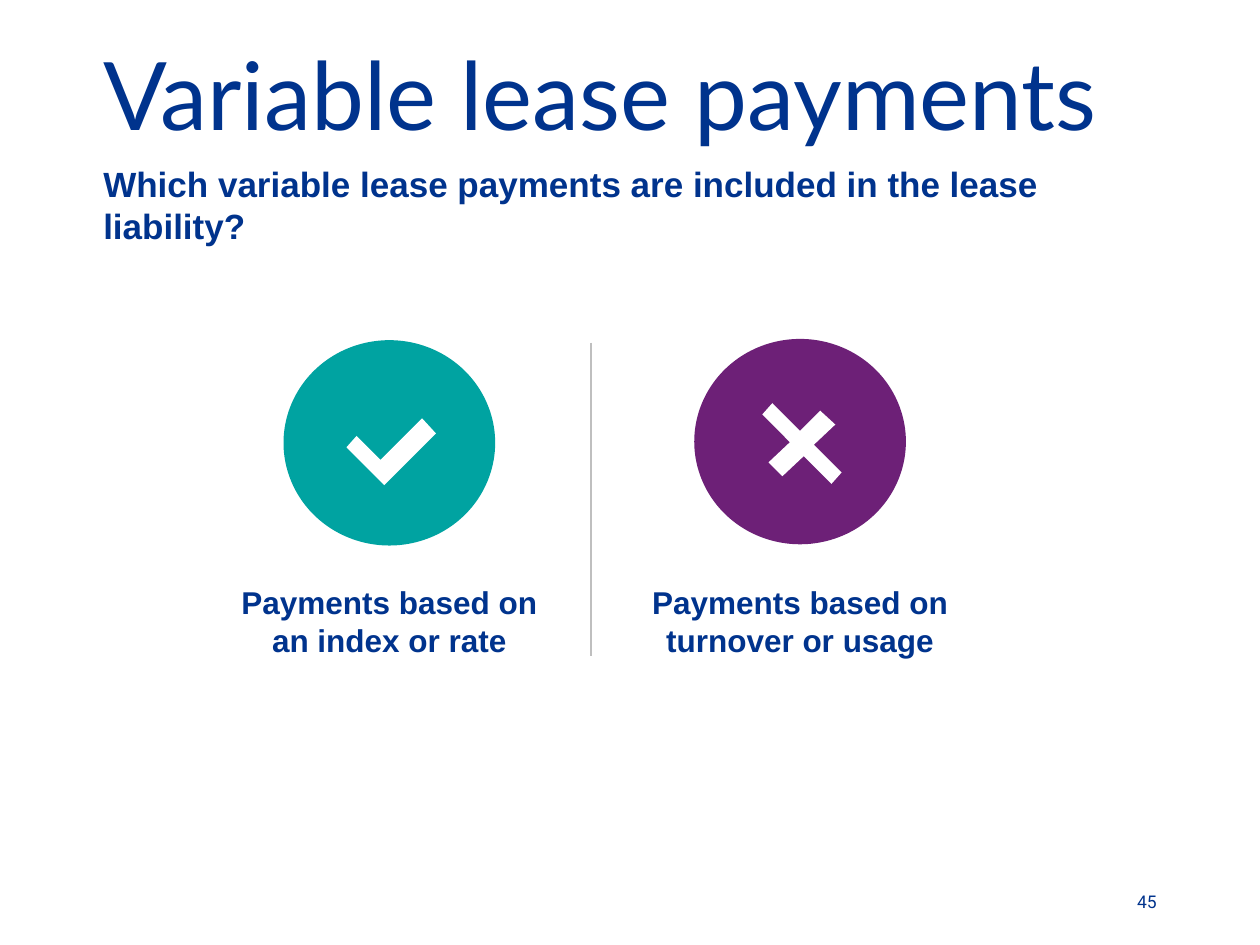
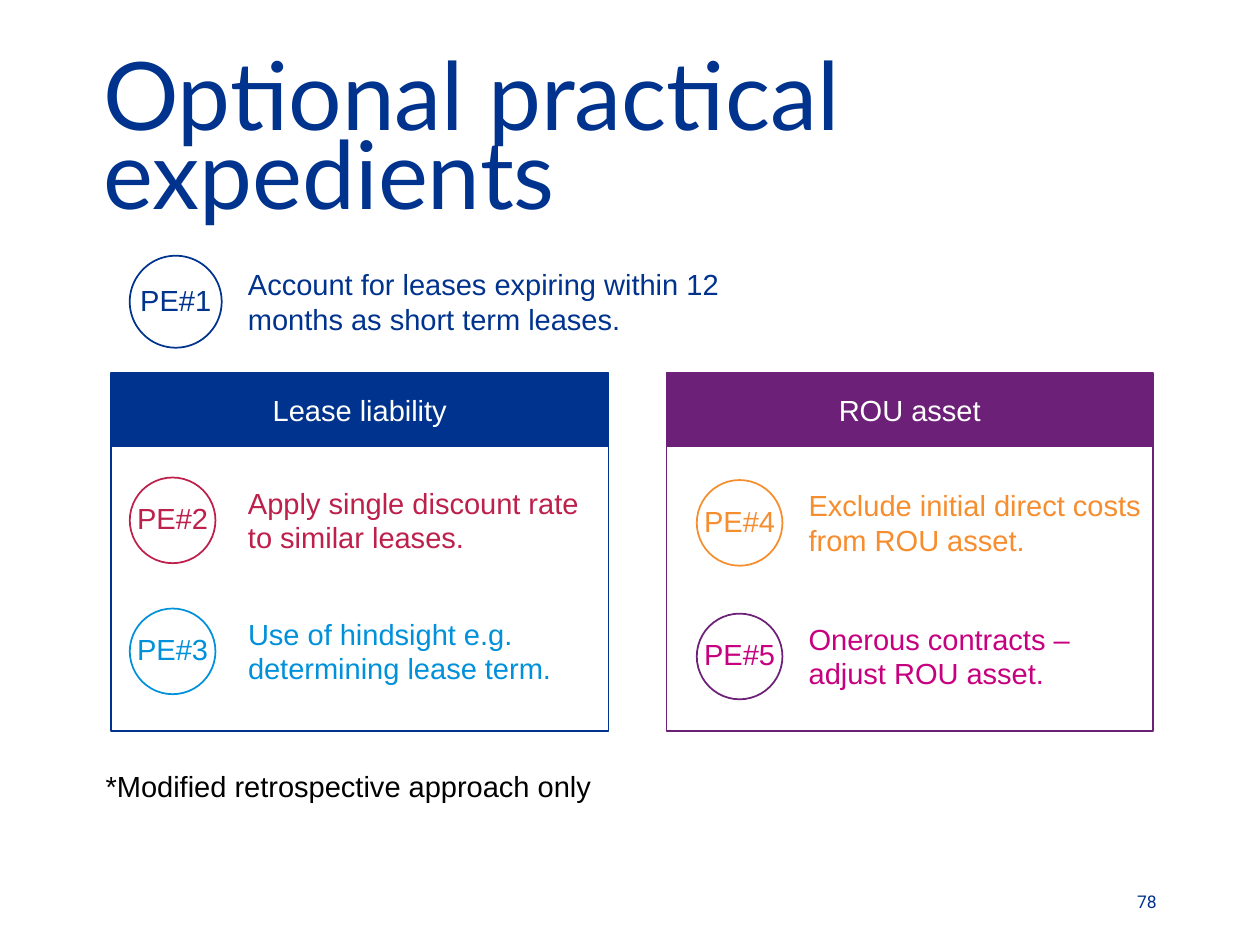
from lxml import etree
from pptx import Presentation
from pptx.dml.color import RGBColor
from pptx.enum.shapes import MSO_CONNECTOR, MSO_SHAPE
from pptx.enum.text import MSO_ANCHOR, PP_ALIGN
from pptx.oxml.ns import qn
from pptx.util import Inches, Pt

OVAL, RECTANGLE = MSO_SHAPE.OVAL, MSO_SHAPE.RECTANGLE
STRAIGHT = MSO_CONNECTOR.STRAIGHT
LEFT, CENTER, RIGHT = PP_ALIGN.LEFT, PP_ALIGN.CENTER, PP_ALIGN.RIGHT
TOP, MIDDLE, BOTTOM = MSO_ANCHOR.TOP, MSO_ANCHOR.MIDDLE, MSO_ANCHOR.BOTTOM

NAVY = RGBColor(0x00, 0x33, 0x8D)
PURPLE = RGBColor(0x6D, 0x20, 0x77)
TEAL = RGBColor(0x00, 0xA3, 0xA1)
RED = RGBColor(0xBC, 0x20, 0x4B)
BLUE = RGBColor(0x00, 0x91, 0xDA)
ORANGE = RGBColor(0xF6, 0x8D, 0x2E)
PINK = RGBColor(0xC6, 0x00, 0x7E)
GREY = RGBColor(0xBF, 0xBF, 0xBF)
BLACK = RGBColor(0x00, 0x00, 0x00)
WHITE = RGBColor(0xFF, 0xFF, 0xFF)

BODY_FONT, TITLE_FONT, NUMBER_FONT = "Arial", "Lato", "Roboto"
BODY_SIZE = 16.6
MARGIN = 0.82

# Outlines in inches from the top left of the disc that holds them
TICK = [(1.10, 0.62), (1.21, 0.74), (0.80, 1.15), (0.50, 0.85), (0.58, 0.76), (0.77, 0.95)]
CROSS = [(0.62, 0.51), (0.84, 0.73), (1.00, 0.57), (1.12, 0.68), (0.95, 0.84), (1.17, 1.06),
         (1.09, 1.15), (0.87, 0.93), (0.70, 1.09), (0.59, 0.98), (0.76, 0.82), (0.54, 0.60)]


def write(shape, text, color, size=BODY_SIZE, font=BODY_FONT, bold=False, align=LEFT,
          anchor=TOP, insets=(0, 0), wrap=True, line_spacing=None):
    """Fill a shape with one paragraph; insets are (sides, top and bottom)."""
    frame = shape.text_frame
    frame.word_wrap = wrap
    frame.vertical_anchor = anchor
    frame.margin_left = frame.margin_right = Inches(insets[0])
    frame.margin_top = frame.margin_bottom = Inches(insets[1])
    para = frame.paragraphs[0]
    para.alignment = align
    if line_spacing:
        para.line_spacing = line_spacing
    span = para.add_run()
    span.text = text
    span.font.name = font
    span.font.size = Pt(size)
    span.font.bold = bold
    span.font.color.rgb = color


def add_text(page, box, text, color, **style):
    write(page.shapes.add_textbox(*map(Inches, box)), text, color, **style)


def paint(shape, fill=None, line=None):
    shape.shadow.inherit = False
    if fill is None:
        shape.fill.background()
    else:
        shape.fill.solid()
        shape.fill.fore_color.rgb = fill
    if line is None:
        shape.line.fill.background()
    else:
        shape.line.color.rgb = line
        shape.line.width = Pt(1)


def add_shape(page, kind, box, fill=None, line=None):
    shape = page.shapes.add_shape(kind, *map(Inches, box))
    paint(shape, fill, line)
    return shape


def add_page(deck, title, number):
    page = deck.slides.add_slide(deck.slide_layouts[6])
    add_text(page, (MARGIN, 0.53, 8.35, 0.57), title, NAVY, size=54, font=TITLE_FONT,
             line_spacing=0.7)
    add_text(page, (7.87, 7.08, 1.31, 0.16), number, NAVY, size=10, font=NUMBER_FONT,
             align=RIGHT, anchor=BOTTOM)
    return page


def add_verdict(page, left, top, color, symbol, caption):
    """Coloured disc with a white symbol, and a caption centred below it."""
    disc_width, disc_height, caption_width = 1.68, 1.63, 2.4
    add_shape(page, OVAL, (left, top, disc_width, disc_height), color)
    points = [(Inches(left + x), Inches(top + y)) for x, y in symbol]
    builder = page.shapes.build_freeform(*points[0])
    builder.add_line_segments(points[1:], close=True)
    paint(builder.convert_to_shape(), WHITE)
    caption_left = left + (disc_width - caption_width) / 2
    add_text(page, (caption_left, 4.63, caption_width, 0.46), caption, NAVY,
             size=18, bold=True, align=CENTER)


def add_divider(page, x, top, bottom):
    divider = page.shapes.add_connector(STRAIGHT, *map(Inches, (x, top, x, bottom)))
    divider.line.color.rgb = GREY
    divider.line.width = Pt(1)
    etree.SubElement(divider._element.spPr, qn("a:effectLst"))


def add_expedient(page, left, top, number, text, color, text_left, text_width,
                  ring=None, diameter=0.68):
    """Numbered ring with its explanation level with it on the right."""
    badge = add_shape(page, OVAL, (left, top, diameter, diameter), WHITE, ring or color)
    write(badge, f"PE#{number}", color, align=CENTER, anchor=MIDDLE, wrap=False,
          line_spacing=0.9)
    text_height = 0.66
    text_top = top + (diameter - text_height) / 2
    add_text(page, (text_left, text_top, text_width, text_height), text, color,
             insets=(0.1, 0.05))


def add_panel(page, left, width, heading, color):
    top, header_height, body_height = 2.96, 0.58, 2.26
    header = add_shape(page, RECTANGLE, (left, top, width, header_height), color, color)
    write(header, heading, WHITE, align=CENTER, anchor=MIDDLE, insets=(0.1, 0.05))
    add_shape(page, RECTANGLE, (left, top + header_height, width, body_height), line=color)


def build_variable_payments(deck):
    page = add_page(deck, "Variable lease payments", "45")
    add_text(page, (MARGIN, 1.29, 8.37, 0.46),
             "Which variable lease payments are included in the lease liability?",
             NAVY, size=20, bold=True)
    add_verdict(page, 2.25, 2.7, TEAL, TICK, "Payments based on an index or rate")
    add_verdict(page, 5.51, 2.69, PURPLE, CROSS, "Payments based on turnover or usage")
    add_divider(page, 4.69, 2.72, 5.21)


def build_practical_expedients(deck):
    page = add_page(deck, "Optional practical expedients", "78")
    ring_left, text_left = 1.03, 1.87
    add_expedient(page, ring_left, 2.03, 1,
                  "Account for leases expiring within 12 months as short term leases.",
                  NAVY, text_left, 4.2, diameter=0.73)

    add_panel(page, 0.88, 3.95, "Lease liability", NAVY)
    add_expedient(page, ring_left, 3.79, 2, "Apply single discount rate to similar leases.",
                  RED, text_left, 2.84)
    add_expedient(page, ring_left, 4.83, 3, "Use of hindsight e.g. determining lease term.",
                  BLUE, text_left, 3.05)

    add_panel(page, 5.29, 3.86, "ROU asset", PURPLE)
    ring_left, text_left = 5.53, 6.32
    add_expedient(page, ring_left, 3.81, 4, "Exclude initial direct costs from ROU asset.",
                  ORANGE, text_left, 2.83)
    add_expedient(page, ring_left, 4.87, 5, "Onerous contracts – adjust ROU asset.",
                  PINK, text_left, 2.67, ring=PURPLE)

    add_text(page, (0.74, 6.05, 5.3, 0.38), "*Modified retrospective approach only", BLACK,
             insets=(0.1, 0.05))


def main():
    deck = Presentation()
    deck.slide_width, deck.slide_height = Inches(10), Inches(7.5)
    build_variable_payments(deck)
    build_practical_expedients(deck)
    deck.save("out.pptx")


if __name__ == "__main__":
    main()
